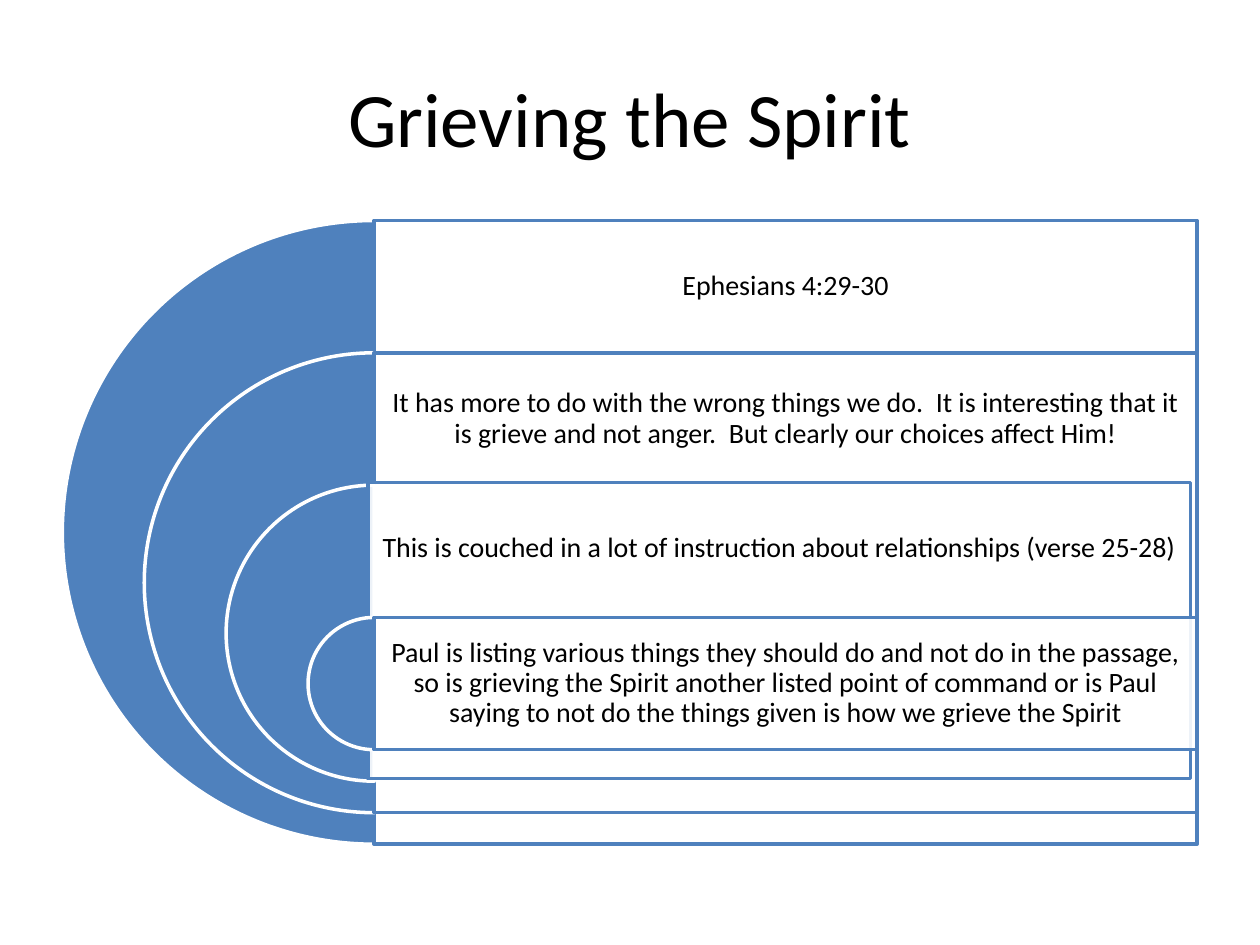
import pptx
import pptx.util
import pptx.dml.color
import pptx.enum.shapes
import pptx.enum.text
import pptx.oxml
import pptx.oxml.ns
from dataclasses import dataclass

Inches, Pt = pptx.util.Inches, pptx.util.Pt
RGB = pptx.dml.color.RGBColor.from_string
MSO_SHAPE = pptx.enum.shapes.MSO_SHAPE


@dataclass(frozen=True)
class Theme:
    font: str = "Calibri"
    accent: str = "4F81BD"
    paper: str = "FFFFFF"
    ink: str = "000000"
    title_size: int = 44
    body_size: int = 16
    line_width: int = 2


theme = Theme()


def add_outlined(shapes, kind, box, fill, line):
    sp = shapes.add_shape(kind, *map(Inches, box))
    sp.shadow.inherit = False
    sp.fill.solid()
    sp.fill.fore_color.rgb = RGB(fill)
    sp.line.color.rgb = RGB(line)
    sp.line.width = Pt(theme.line_width)
    return sp


def write_centred(tf, text, size):
    tf.text = text
    tf.word_wrap = True
    tf.vertical_anchor = pptx.enum.text.MSO_ANCHOR.MIDDLE
    p = tf.paragraphs[0]
    p.alignment = pptx.enum.text.PP_ALIGN.CENTER
    font = p.runs[0].font
    font.name, font.size = theme.font, Pt(size)
    font.color.rgb = RGB(theme.ink)
    return p


prs = pptx.Presentation()
prs.slide_width, prs.slide_height = Inches(10), Inches(7.5)
slide = prs.slides.add_slide(prs.slide_layouts[5])

title = slide.shapes.title
title.left, title.top = Inches(0.5), Inches(0.3)
title.width, title.height = Inches(9), Inches(1.25)
write_centred(title.text_frame, "Grieving the Spirit", theme.title_size)

# Each row: text, and the panel's shift (x, y) from the regular position
rows = [
    ("Ephesians 4:29-30", (0, 0)),
    ("It has more to do with the wrong things we do.  It is interesting that it "
     "is grieve and not anger.  But clearly our choices affect Him!", (0, 0)),
    ("This is couched in a lot of instruction about relationships (verse 25-28)",
     (-0.05, -0.02)),
    ("Paul is listing various things they should do and not do in the passage, "
     "so is grieving the Spirit another listed point of command or is Paul "
     "saying to not do the things given is how we grieve the Spirit", (0, 0)),
]
center_x, top_y = 2.97, 1.75
outer_diameter, diameter_step = 4.95, 1.3
row_height, panel_width = 1.05, 6.53

diagram = slide.shapes.add_group_shape().shapes
for i, (text, (dx, dy)) in enumerate(rows):
    diameter = outer_diameter - i * diameter_step
    top = top_y + i * row_height
    left, panel_top = center_x + dx, top + dy

    half_disc = add_outlined(diagram, MSO_SHAPE.PIE,
                             (center_x - diameter / 2, top, diameter, diameter),
                             theme.accent, theme.paper)
    # Angles from 90 to 270 degrees, in units of 100000/60000 degree
    half_disc.adjustments[0], half_disc.adjustments[1] = 54, 162

    panel = add_outlined(diagram, MSO_SHAPE.RECTANGLE,
                         (left, panel_top, panel_width, diameter),
                         theme.paper, theme.accent)
    color = panel.fill._xPr.find(".//" + pptx.oxml.ns.qn("a:srgbClr"))
    color.append(pptx.oxml.parse_xml(
        f'<a:alpha {pptx.oxml.ns.nsdecls("a")} val="90000"/>'))

    label = diagram.add_textbox(*map(Inches, (left, panel_top, panel_width, row_height)))
    tf = label.text_frame
    tf.margin_left = tf.margin_right = tf.margin_top = tf.margin_bottom = Inches(0.07)
    write_centred(tf, text, theme.body_size).line_spacing = 0.9

prs.save("out.pptx")
